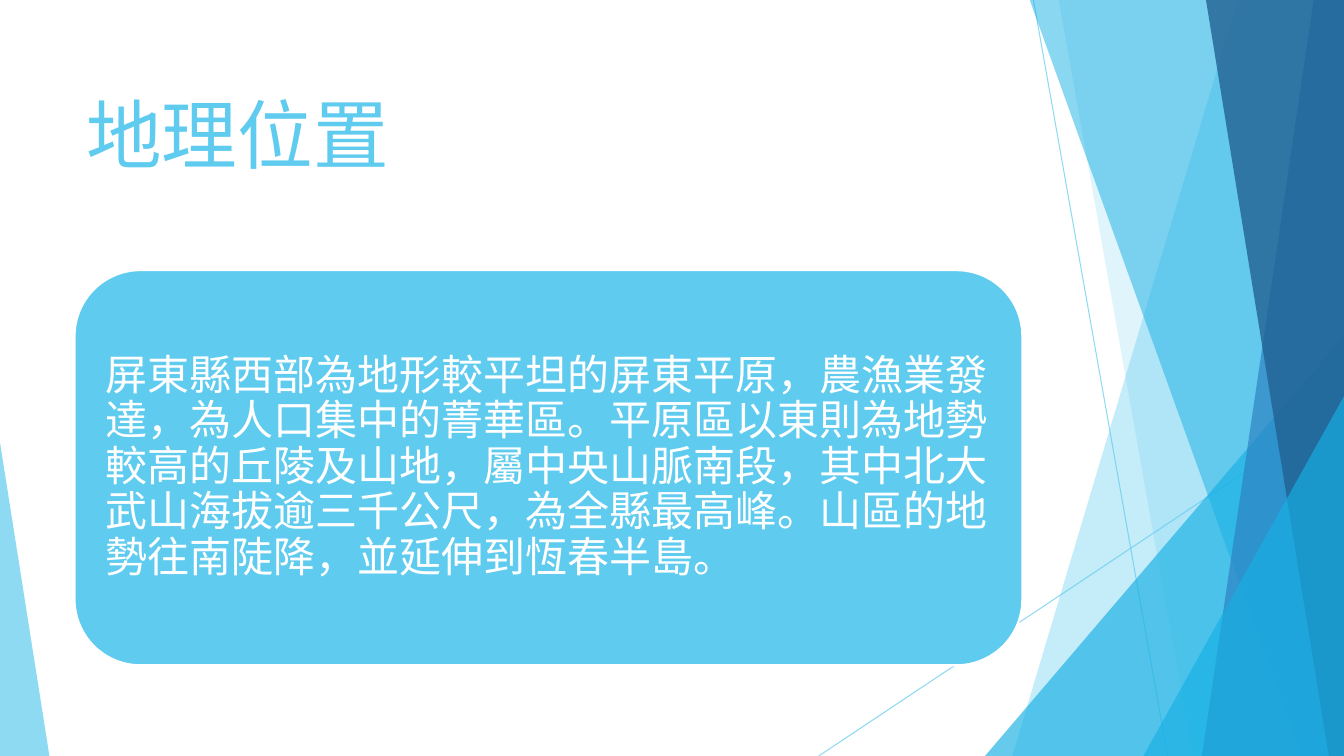
from lxml import etree
from pptx import Presentation
from pptx.dml.color import RGBColor
from pptx.enum.shapes import MSO_CONNECTOR, MSO_SHAPE
from pptx.enum.text import MSO_ANCHOR, PP_ALIGN
from pptx.oxml.ns import qn
from pptx.util import Inches, Pt

STRAIGHT = MSO_CONNECTOR.STRAIGHT
TRIANGLE = MSO_SHAPE.ISOSCELES_TRIANGLE
ROUND = MSO_SHAPE.ROUNDED_RECTANGLE
LEFT, CENTER = PP_ALIGN.LEFT, PP_ALIGN.CENTER
TOP, MIDDLE = MSO_ANCHOR.TOP, MSO_ANCHOR.MIDDLE

WIDE, HIGH = 13.33, 7.5
COLORS = {"sky": "5FCBEF", "cyan": "17B0E4", "blue": "2E83C3",
          "navy": "226292", "white": "FFFFFF"}
TITLE = "地理位置"
BODY = ("屏東縣西部為地形較平坦的屏東平原，農漁業發達，為人口集中的菁華區。"
        "平原區以東則為地勢較高的丘陵及山地，屬中央山脈南段，"
        "其中北大武山海拔逾三千公尺，為全縣最高峰。"
        "山區的地勢往南陡降，並延伸到恆春半島。")
TITLE_BOX = (0.74, 0.82, 3.23, 1.01)
CARD_BOX = (0.74, 2.68, 9.4, 3.92)

# Lines: start and end points
LINES = [(10.25, 0, 11.58, HIGH), (WIDE, 4.03, 8.12, HIGH)]
# Back to front. Band: top and bottom x of its left edge.
# Wedge: left, top, width, apex position.
FACETS = [
    ("band", (12.28, 10.04), "sky", 36),
    ("band", (10.5, 11.83), "sky", 20),
    ("wedge", (9.77, 3.33, 3.56, 1), "cyan", 66),
    ("band", (10.21, 12.91), "cyan", 50),
    ("band", (13.03, 11.92), "blue", 70),
    ("band", (11.96, 13.18), "navy", 80),
    ("wedge", (11.34, 3.93, 1.99, 1), "cyan", 66),
    ("wedge", (0, 4.39, 0.49, 0), "sky", 70),
]
TITLE_FORMAT = {"word_wrap": False, "vertical_anchor": TOP}
CARD_FORMAT = {"word_wrap": True, "vertical_anchor": MIDDLE,
               **{f"margin_{side}": Inches(0.12)
                  for side in ("left", "top", "right", "bottom")}}

deck = Presentation()
deck.slide_width, deck.slide_height = Inches(WIDE), Inches(HIGH)
slide = deck.slides.add_slide(deck.slide_layouts[5])
shapes = slide.shapes


def rgb(name):
    return RGBColor.from_string(COLORS[name])


def paint(fill, color, alpha=100):
    """Set a solid fill with its opacity in percent."""
    fill.solid()
    fill.fore_color.rgb = rgb(color)
    if alpha < 100:
        tint = fill._xPr.find(qn("a:solidFill"))[0]
        etree.SubElement(tint, qn("a:alpha"), val=str(alpha * 1000))


def band(top, low):
    pen = shapes.build_freeform(Inches(top), Inches(-0.01))
    pen.add_line_segments([(Inches(x), Inches(y)) for x, y in
                           ((WIDE, -0.01), (WIDE, HIGH), (low, HIGH))])
    return pen.convert_to_shape()


def wedge(left, top, width, apex):
    shape = shapes.add_shape(TRIANGLE, *map(Inches, (left, top, width, HIGH - top)))
    shape.adjustments[0] = apex
    return shape


def write(shape, text, frame_format, size, color, align):
    frame = shape.text_frame
    for key, value in frame_format.items():
        setattr(frame, key, value)
    frame.text = text
    para = frame.paragraphs[0]
    para.alignment = align
    font = para.runs[0].font
    for key, value in {"name": "Roboto", "size": Pt(size)}.items():
        setattr(font, key, value)
    font.color.rgb = rgb(color)
    return para


for ends in LINES:
    line = shapes.add_connector(STRAIGHT, *map(Inches, ends))
    line.line.width = Pt(0.75)
    paint(line.line.fill, "sky", 70)
    etree.SubElement(line._element.spPr, qn("a:effectLst"))

MAKERS = {"band": band, "wedge": wedge}
for kind, place, color, alpha in FACETS:
    facet = MAKERS[kind](*place)
    facet.shadow.inherit = False
    facet.line.fill.background()
    paint(facet.fill, color, alpha)

card = shapes.add_shape(ROUND, *map(Inches, CARD_BOX))
card.shadow.inherit = False
paint(card.fill, "sky")
paint(card.line.fill, "white")
card.line.width = Pt(1.5)
write(card, BODY, CARD_FORMAT, 30, "white", LEFT).line_spacing = 0.9

title = shapes.title
title.left, title.top, title.width, title.height = map(Inches, TITLE_BOX)
write(title, TITLE, TITLE_FORMAT, 54, "sky", CENTER)

deck.save("out.pptx")
